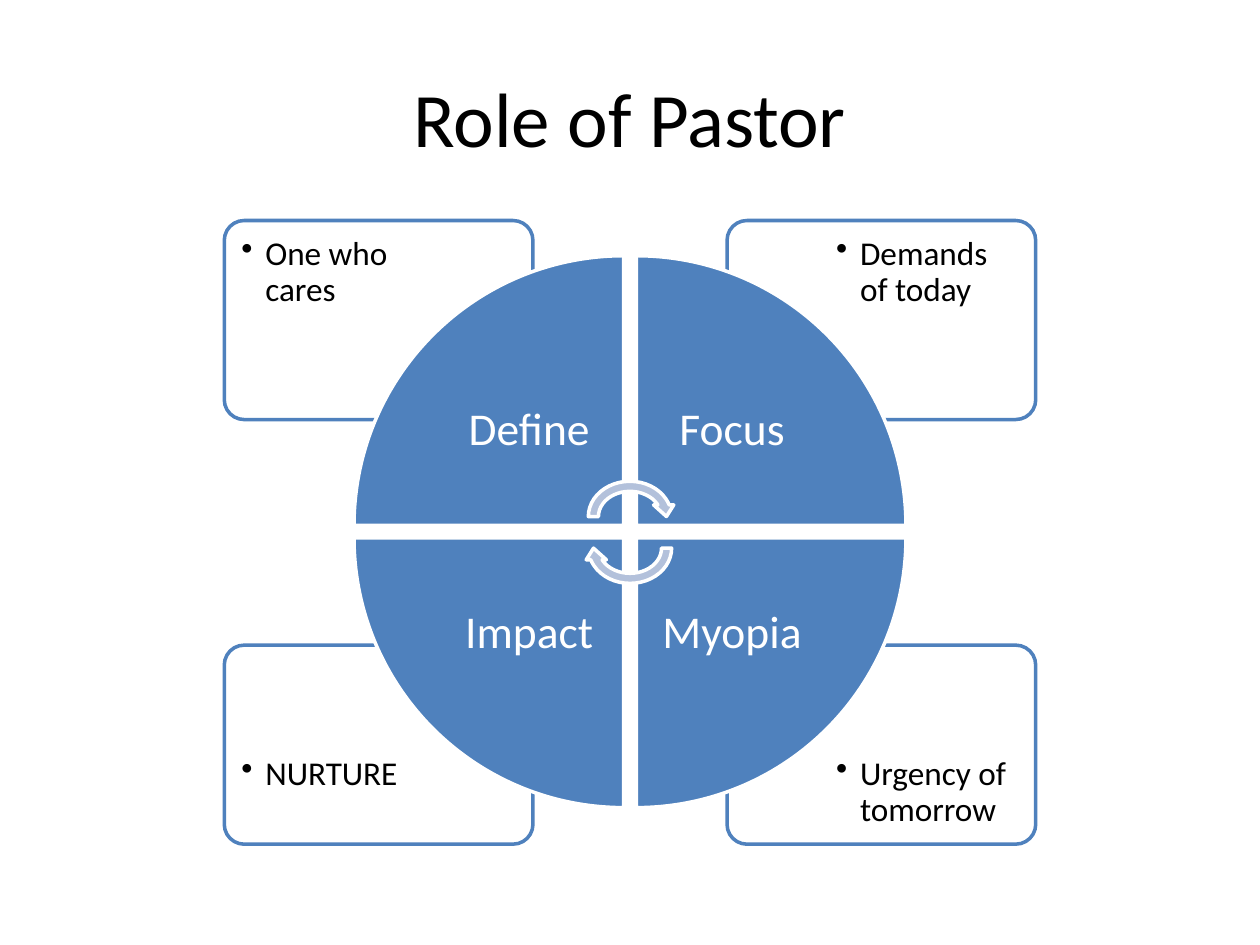
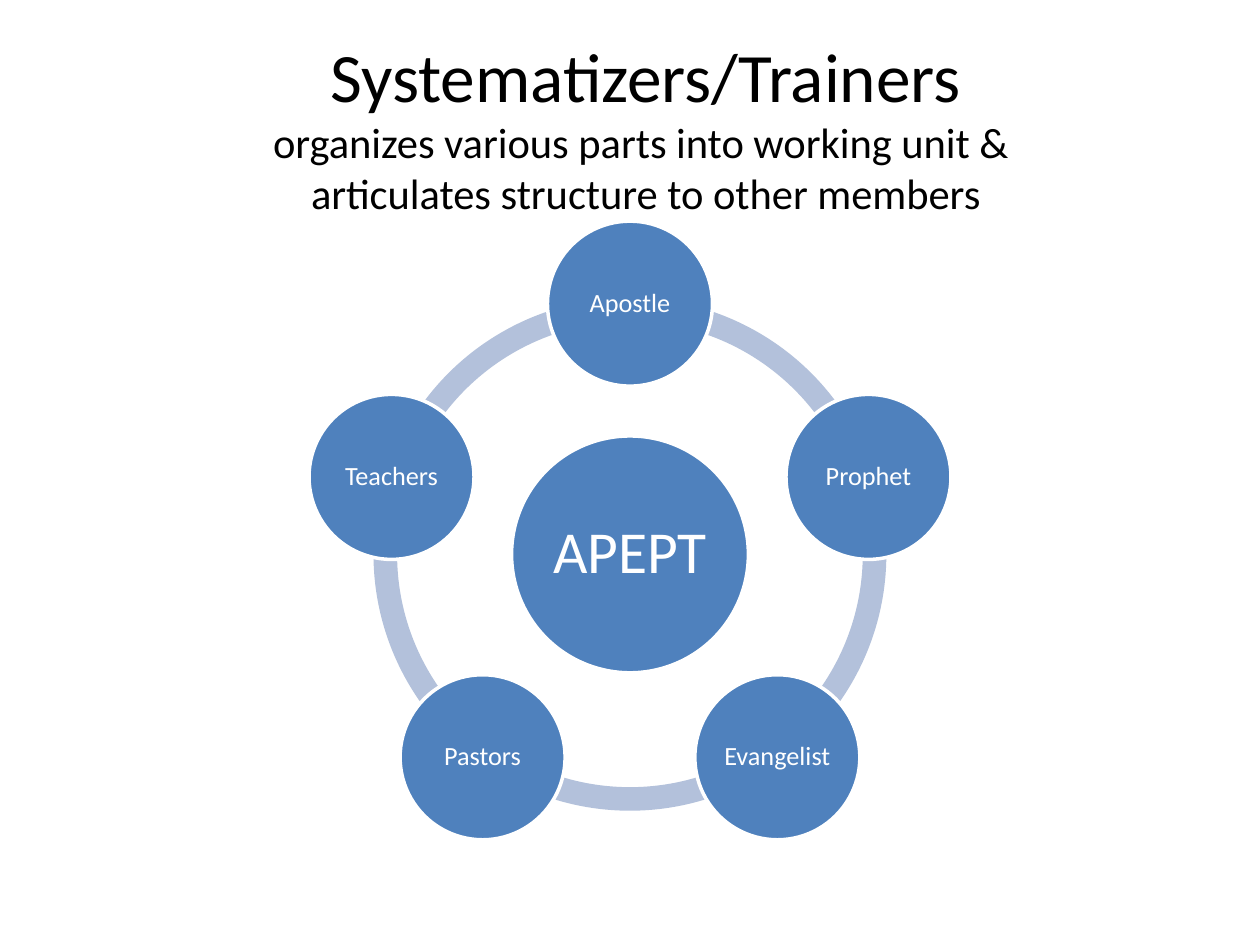
"""Build two slides: the role of a pastor, and the systematizers' ring."""
import math
from dataclasses import dataclass

from lxml import etree
from pptx import Presentation
from pptx.dml.color import RGBColor
from pptx.enum import shapes, text
from pptx.oxml import ns
from pptx.util import Inches, Pt

FONT = "Calibri"
BLUE = RGBColor(0x4F, 0x81, 0xBD)
PALE_BLUE = RGBColor(0xB3, 0xC1, 0xDB)
WHITE = RGBColor(0xFF, 0xFF, 0xFF)
BLACK = RGBColor(0, 0, 0)
TITLE_ONLY = 5
KIND = shapes.MSO_SHAPE


@dataclass(frozen=True)
class Box:
    left: float
    top: float
    width: float
    height: float

    def lengths(self):
        return [Inches(side) for side in (self.left, self.top, self.width, self.height)]


@dataclass(frozen=True)
class Quadrant:
    label: str
    detail: str
    column: int
    row: int
    rotation: int


QUADRANTS = [
    Quadrant("Define", "One who cares", 0, 0, 0),
    Quadrant("Focus", "Demands of today", 1, 0, 90),
    Quadrant("Myopia", "Urgency of tomorrow", 1, 1, 180),
    Quadrant("Impact", "NURTURE", 0, 1, 270),
]
MINISTRIES = ["Apostle", "Prophet", "Evangelist", "Pastors", "Teachers"]


def centred_box(x: float, y: float, size: float) -> Box:
    return Box(x - size / 2, y - size / 2, size, size)


def format_paragraph(paragraph, size: float, color: RGBColor, alignment=text.PP_ALIGN.CENTER) -> None:
    paragraph.alignment = alignment
    for run in paragraph.runs:
        run.font.name = FONT
        run.font.size = Pt(size)
        run.font.color.rgb = color


def set_margins(frame, left: float, top: float, right: float, bottom: float) -> None:
    frame.margin_left, frame.margin_top = Inches(left), Inches(top)
    frame.margin_right, frame.margin_bottom = Inches(right), Inches(bottom)


def add_titled_slide(presentation, box: Box, lines: list[str], sizes: list[float]):
    slide = presentation.slides.add_slide(presentation.slide_layouts[TITLE_ONLY])
    title = slide.shapes.title
    title.left, title.top, title.width, title.height = box.lengths()
    frame = title.text_frame
    frame.text = "\n".join(lines)
    frame.auto_size = text.MSO_AUTO_SIZE.NONE
    frame.vertical_anchor = text.MSO_ANCHOR.MIDDLE
    for paragraph, size in zip(frame.paragraphs, sizes):
        format_paragraph(paragraph, size, BLACK)
    return slide


def add_figure(slide, kind, box: Box, fill: RGBColor, line: RGBColor | None = WHITE, rotation: float = 0):
    shape = slide.shapes.add_shape(kind, *box.lengths())
    shape.shadow.inherit = False
    shape.rotation = rotation
    shape.fill.solid()
    shape.fill.fore_color.rgb = fill
    if line is None:
        shape.line.fill.background()
    else:
        shape.line.color.rgb = line
        shape.line.width = Pt(2)
    return shape


def write_label(shape, label: str, size: float) -> None:
    frame = shape.text_frame
    frame.text = label
    frame.word_wrap = True
    frame.vertical_anchor = text.MSO_ANCHOR.MIDDLE
    set_margins(frame, 0.02, 0.02, 0.02, 0.02)
    paragraph = frame.paragraphs[0]
    paragraph.line_spacing = 0.9
    format_paragraph(paragraph, size, WHITE)


def write_bullet(shape, detail: str, on_right: bool, top_margin: float) -> None:
    outer, inner = 0.09, 0.82
    frame = shape.text_frame
    frame.text = detail
    frame.word_wrap = True
    frame.vertical_anchor = text.MSO_ANCHOR.TOP
    left, right = (inner, outer) if on_right else (outer, inner)
    set_margins(frame, left, top_margin, right, 0)
    paragraph = frame.paragraphs[0]
    paragraph.line_spacing = 0.9
    format_paragraph(paragraph, 19, BLACK, text.PP_ALIGN.LEFT)
    properties = paragraph._p.get_or_add_pPr()
    properties.set("marL", str(Inches(0.19)))
    properties.set("indent", str(-Inches(0.19)))
    etree.SubElement(properties, ns.qn("a:buChar")).set("char", "•")


def build_pastor_slide(presentation) -> None:
    slide = add_titled_slide(presentation, Box(0.5, 0.3, 9, 1.25), ["Role of Pastor"], [44])
    for quadrant in QUADRANTS:
        box = Box(1.78 + 3.99 * quadrant.column, 1.75 + 3.37 * quadrant.row, 2.45, 1.58)
        card = add_figure(slide, KIND.ROUNDED_RECTANGLE, box, WHITE, BLUE)
        card.adjustments[0] = 0.1
        write_bullet(card, quadrant.detail, quadrant.column == 1, 0.84 if quadrant.row else 0.08)
    for quadrant in QUADRANTS:
        column, row = quadrant.column, quadrant.row
        wedge = Box(2.81 + 2.24 * column, 2.03 + 2.24 * row, 2.14, 2.14)
        add_figure(slide, KIND.PIE_WEDGE, wedge, BLUE, rotation=quadrant.rotation)
        label = Box(3.44 + 1.61 * column, 2.66 + 1.61 * row, 1.52, 1.52)
        write_label(slide.shapes.add_textbox(*label.lengths()), quadrant.label, 26)
    for top, rotation in ((3.78, 0), (4.03, 180)):
        add_figure(slide, KIND.CIRCULAR_ARROW, Box(4.63, top, 0.74, 0.64), PALE_BLUE, rotation=rotation)


def build_trainers_slide(presentation) -> None:
    lines = [
        "Systematizers/Trainers",
        "organizes various parts into working unit & ",
        "articulates structure to other members",
    ]
    slide = add_titled_slide(presentation, Box(0.5, 0.33, 9.25, 1.33), lines, [39.6, 24.3, 24.3])
    center_x, center_y, radius = 5, 4.4, 1.99
    step = 360 / len(MINISTRIES)
    angles = [(270 + step * index) % 360 for index in range(len(MINISTRIES))]
    for angle in angles:
        arc = add_figure(slide, KIND.BLOCK_ARC, centred_box(center_x, center_y, 4.07), PALE_BLUE, None)
        arc.adjustments[0] = angle * 0.6
        arc.adjustments[1] = (angle + step) % 360 * 0.6
        arc.adjustments[2] = 0.046
    hub = add_figure(slide, KIND.OVAL, centred_box(center_x, center_y, 1.88), BLUE)
    write_label(hub, "APEPT", 34)
    for ministry, angle in zip(MINISTRIES, angles):
        x = center_x + radius * math.cos(math.radians(angle))
        y = center_y + radius * math.sin(math.radians(angle))
        node = add_figure(slide, KIND.OVAL, centred_box(x, y, 1.31), BLUE)
        write_label(node, ministry, 15)


def main() -> None:
    presentation = Presentation()
    presentation.slide_width, presentation.slide_height = Inches(10), Inches(7.5)
    build_pastor_slide(presentation)
    build_trainers_slide(presentation)
    presentation.save("out.pptx")


if __name__ == "__main__":
    main()
